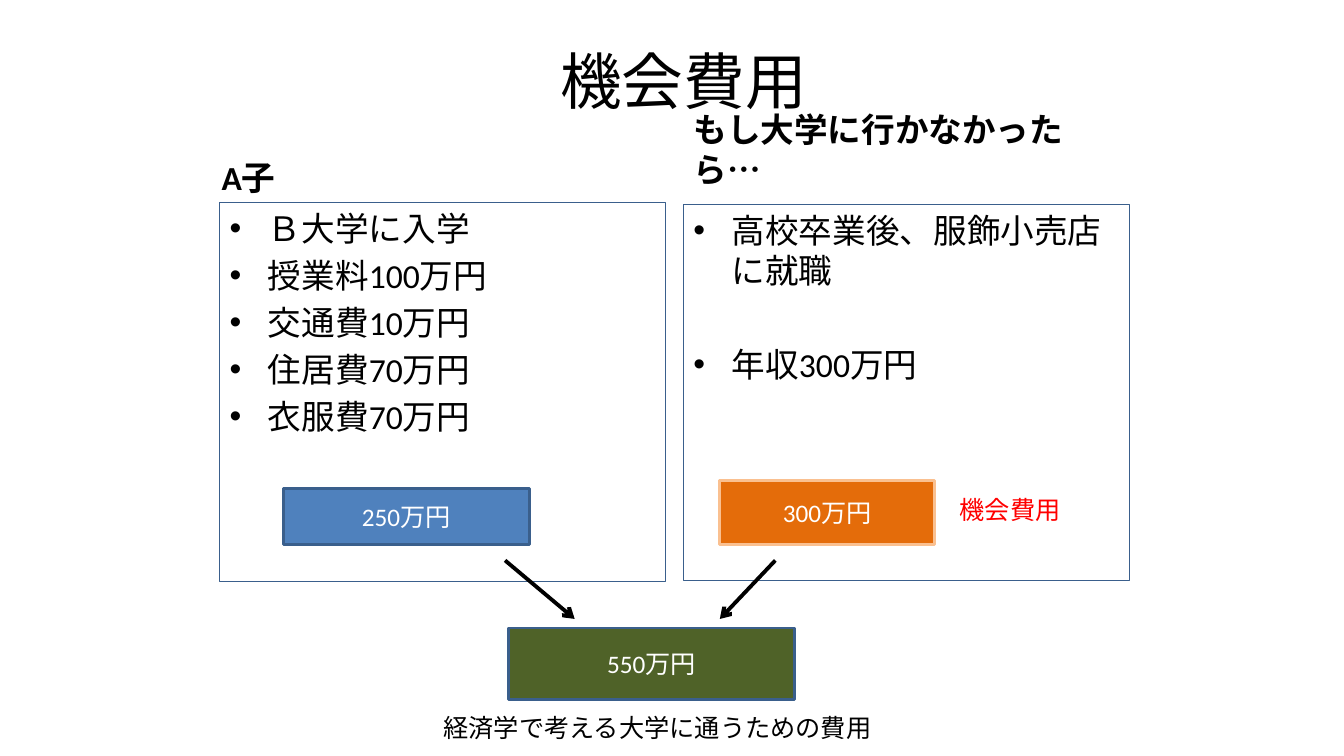
from dataclasses import dataclass

from lxml import etree
from pptx import Presentation
from pptx import util as u
from pptx.dml.color import RGBColor
from pptx.enum import lang, shapes, text
from pptx.oxml import ns


@dataclass(frozen=True)
class Theme:
    body_font: str = "Calibri"
    note_font: str = "Arial"
    title_size: int = 44
    body_size: int = 24
    note_size: int = 18
    ink: str = "000000"
    paper: str = "FFFFFF"
    accent: str = "FF0000"
    outline: str = "3A5F8C"
    blue: str = "4F81BD"
    orange: str = "E46C0A"
    peach: str = "FAC090"
    green: str = "4F6228"


THEME = Theme()
MIDDLE, BOTTOM = text.MSO_ANCHOR.MIDDLE, text.MSO_ANCHOR.BOTTOM
CENTER = text.PP_ALIGN.CENTER
ITEM_GAP = 4.8
WIDE_GAP = 38.4
PANEL_WIDTH = 33.16

# Every box is left, top, width, height in percent of the slide.
TITLE = ("機会費用", (17.1, 3.73, 67.52, 13.6))
PANELS = [
    dict(heading="A子", heading_at=(15.75, 17.47), at=(16.35, 26.8), height=50.13,
         items=["Ｂ大学に入学", "授業料100万円", "交通費10万円", "住居費70万円", "衣服費70万円"],
         gap=ITEM_GAP),
    dict(heading="もし大学に行かなかったら…", heading_at=(50.86, 16.4), at=(50.86, 27.07), height=49.73,
         items=["高校卒業後、服飾小売店に就職", "年収300万円"], gap=WIDE_GAP),
]
AMOUNTS = [
    ("250万円", (21.08, 64.67, 18.3, 7.33), THEME.blue, THEME.outline),
    ("300万円", (53.56, 63.6, 15.98, 8.4), THEME.orange, THEME.peach),
    ("550万円", (37.81, 83.07, 21.31, 9.47), THEME.green, THEME.outline),
]
NOTES = [
    ("機会費用", (70.67, 64.67, 10.65, 5.33), THEME.accent),
    ("経済学で考える大学に通うための費用", (32.26, 93.6, 37.21, 5.33), THEME.ink),
]
ARROWS_TOP, ARROWS_BOTTOM = 74.13, 81.87
ARROWS = [(37.58, 42.76), (57.69, 53.56)]

deck = Presentation()
deck.slide_width, deck.slide_height = u.Inches(13.33), u.Inches(7.5)
slide = deck.slides.add_slide(deck.slide_layouts[6])


def place(*shares):
    """Turn alternating x and y percentages into slide lengths."""
    sides = (deck.slide_width, deck.slide_height)
    return [round(sides[i % 2] * share / 100) for i, share in enumerate(shares)]


def add_bullet(paragraph):
    indent = u.Inches(0.38)
    props = paragraph._p.get_or_add_pPr()
    props.set("marL", str(indent))
    props.set("indent", str(-indent))
    etree.SubElement(props, ns.qn("a:buFont")).set("typeface", THEME.note_font)
    etree.SubElement(props, ns.qn("a:buChar")).set("char", "•")


def write(shape, *lines, size=THEME.body_size, font=THEME.body_font, color=THEME.ink, bold=False,
          align=text.PP_ALIGN.LEFT, anchor=text.MSO_ANCHOR.TOP, bullets=False, gap=0):
    frame = shape.text_frame
    frame.word_wrap = True
    frame.vertical_anchor = anchor
    for index, line in enumerate(lines):
        paragraph = frame.add_paragraph() if index else frame.paragraphs[0]
        paragraph.alignment = align
        if index:
            paragraph.space_before = u.Pt(gap)
        if bullets:
            add_bullet(paragraph)
        run = paragraph.add_run()
        run.text = line
        run.font.size, run.font.name, run.font.bold = u.Pt(size), font, bold
        run.font.color.rgb = RGBColor.from_string(color)
        run.font.language_id = lang.MSO_LANGUAGE_ID.JAPANESE


def add_text(box, *lines, **style):
    write(slide.shapes.add_textbox(*place(*box)), *lines, **style)


def add_rectangle(box, line, line_width, fill=None):
    rectangle = slide.shapes.add_shape(shapes.MSO_SHAPE.RECTANGLE, *place(*box))
    rectangle.shadow.inherit = False
    if fill:
        rectangle.fill.solid()
        rectangle.fill.fore_color.rgb = RGBColor.from_string(fill)
    else:
        rectangle.fill.background()
    rectangle.line.color.rgb = RGBColor.from_string(line)
    rectangle.line.width = u.Pt(line_width)
    return rectangle


def add_arrow(start_x, end_x):
    ends = place(start_x, ARROWS_TOP, end_x, ARROWS_BOTTOM)
    arrow = slide.shapes.add_connector(shapes.MSO_CONNECTOR.STRAIGHT, *ends)
    arrow.line.color.rgb = RGBColor.from_string(THEME.ink)
    arrow.line.width = u.Pt(2.75)
    etree.SubElement(arrow.line._get_or_add_ln(), ns.qn("a:tailEnd")).set("type", "arrow")
    etree.SubElement(arrow._element.spPr, ns.qn("a:effectLst"))


title, title_box = TITLE
add_text(title_box, title, size=THEME.title_size, align=CENTER, anchor=MIDDLE)

for panel in PANELS:
    add_text((*panel["heading_at"], PANEL_WIDTH, 9.33), panel["heading"], bold=True, anchor=BOTTOM)
    frame_box = (*panel["at"], PANEL_WIDTH, panel["height"])
    write(add_rectangle(frame_box, THEME.outline, 0.75), *panel["items"], bullets=True, gap=panel["gap"])

for amount, box, fill, line in AMOUNTS:
    write(add_rectangle(box, line, 2, fill), amount, size=THEME.note_size, color=THEME.paper,
          align=CENTER, anchor=MIDDLE)

for note, box, color in NOTES:
    add_text(box, note, size=THEME.note_size, font=THEME.note_font, color=color)

for start_x, end_x in ARROWS:
    add_arrow(start_x, end_x)

deck.save("out.pptx")
